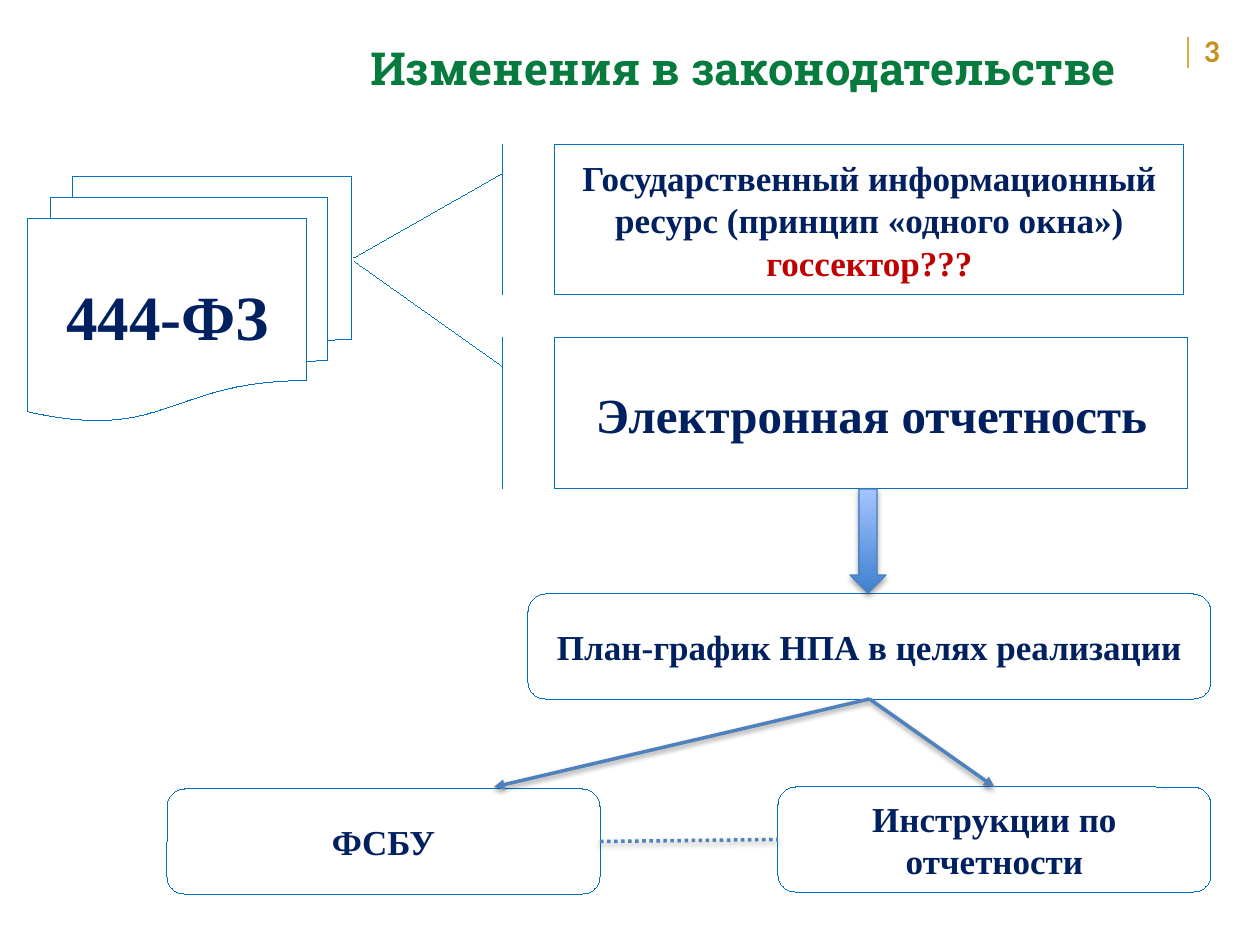
"""Build the slide that maps law 444-ФЗ to its reporting consequences."""
from dataclasses import dataclass
from typing import Optional

from lxml.etree import SubElement
from pptx import Presentation
from pptx.dml.color import RGBColor
from pptx.enum.dml import MSO_LINE
from pptx.enum.shapes import MSO_CONNECTOR, MSO_SHAPE
from pptx.enum.text import MSO_ANCHOR, PP_ALIGN
from pptx.oxml.ns import qn
from pptx.util import Emu, Pt

EMU_PER_PX = 914400 / 126
TOP, LEFT, BOTTOM, RIGHT = range(4)


@dataclass(frozen=True)
class Theme:
    green: str = "077A3E"
    gold: str = "C79023"
    pale_gold: str = "DEAA46"
    navy: str = "002060"
    red: str = "C00000"
    outline: str = "0070C0"
    arrow: str = "4F81BD"
    arrow_edge: str = "4B7EBC"
    arrow_dark: str = "3F80CE"
    arrow_light: str = "A4C4FF"
    title_font: str = "Roboto Slab"
    number_font: str = "Calibri"
    body_font: str = "Times New Roman"
    title_size: int = 26
    number_size: int = 18
    law_size: int = 36
    large_size: int = 28
    body_size: int = 20
    thin: float = 0.75
    thick: float = 2


@dataclass(frozen=True)
class Area:
    left: int
    top: int
    width: int
    height: int

    def emu(self) -> tuple:
        """Return the four lengths in EMU."""
        return tuple(map(px, (self.left, self.top, self.width, self.height)))


@dataclass(frozen=True)
class Block:
    key: str
    preset: MSO_SHAPE
    area: Area
    text: str
    size: int
    warning: str = ""
    adjustments: tuple = ()


@dataclass(frozen=True)
class Link:
    start: tuple
    end: tuple
    begin_at: Optional[tuple] = None
    end_at: Optional[tuple] = None
    dotted: bool = False


THEME = Theme()
ROUNDED = MSO_SHAPE.ROUNDED_RECTANGLE
CALLOUT = MSO_SHAPE.LINE_CALLOUT_1_BORDER_AND_ACCENT_BAR

BLOCKS = (
    Block("law", MSO_SHAPE.FLOWCHART_MULTIDOCUMENT, Area(28, 177, 324, 244),
          "444-ФЗ", THEME.law_size),
    Block("reporting", CALLOUT, Area(555, 338, 633, 151), "Электронная отчетность",
          THEME.large_size, adjustments=(0.188, -0.083, -0.505, -0.316)),
    Block("resource", CALLOUT, Area(555, 145, 629, 150),
          "Государственный информационный ресурс (принцип «одного окна»)",
          THEME.body_size, "госсектор???", (0.188, -0.083, 0.753, -0.32)),
    Block("plan", ROUNDED, Area(528, 594, 683, 105),
          "План-график НПА в целях реализации", THEME.body_size),
    Block("standards", ROUNDED, Area(167, 789, 433, 105), "ФСБУ", THEME.body_size),
    Block("instructions", ROUNDED, Area(778, 787, 433, 105),
          "Инструкции по отчетности", THEME.body_size),
)

LINKS = (
    Link((870, 699), (494, 787), begin_at=("plan", BOTTOM)),
    Link((870, 699), (995, 787), ("plan", BOTTOM), ("instructions", TOP)),
    Link((600, 842), (778, 839), ("standards", RIGHT), ("instructions", LEFT), True),
)


def px(length: int) -> Emu:
    """Turn pixels into EMU."""
    return Emu(round(length * EMU_PER_PX))


def rgb(value: str) -> RGBColor:
    """Turn a hexadecimal string into a colour."""
    return RGBColor.from_string(value)


def write_text(frame, text: str, *, size: int, font: str = THEME.body_font,
               color: str = THEME.navy, align=PP_ALIGN.CENTER) -> None:
    """Write one bold paragraph into a text frame."""
    frame.word_wrap = True
    para = frame.add_paragraph() if frame.text else frame.paragraphs[0]
    para.alignment = align
    span = para.add_run()
    span.text = text
    span.font.size = Pt(size)
    span.font.name = font
    span.font.bold = True
    span.font.color.rgb = rgb(color)


def add_text_box(page, area: Area, text: str, inset: int, **text_format) -> None:
    """Add a text box with its own left inset."""
    frame = page.shapes.add_textbox(*area.emu()).text_frame
    frame.margin_left = px(inset)
    write_text(frame, text, **text_format)


def style_line(line, color: str, width: float) -> None:
    """Give a line its colour and width."""
    line.color.rgb = rgb(color)
    line.width = Pt(width)


def add_shadow(effects, opacity: int, distance: int) -> None:
    """Add a soft shadow that falls downwards."""
    shadow = SubElement(effects, qn("a:outerShdw"), blurRad="40000", dist=str(distance),
                        dir="5400000", rotWithShape="0")
    black = SubElement(shadow, qn("a:srgbClr"), val="000000")
    SubElement(black, qn("a:alpha"), val=str(opacity * 1000))


def add_block(page, block: Block):
    """Draw a shape with a default hairline outline and centred text."""
    shape = page.shapes.add_shape(block.preset, *block.area.emu())
    shape.shadow.inherit = False
    shape.element.remove(shape.element.find(qn("p:style")))
    for index, value in enumerate(block.adjustments):
        shape.adjustments[index] = value
    shape.fill.background()
    shape.line.color.rgb = rgb(THEME.outline)
    shape.text_frame.vertical_anchor = MSO_ANCHOR.MIDDLE
    write_text(shape.text_frame, block.text, size=block.size)
    if block.warning:
        write_text(shape.text_frame, block.warning, size=block.size, color=THEME.red)
    return shape


def add_down_arrow(page, area: Area) -> None:
    """Draw the shaded arrow that leads to the plan."""
    arrow = page.shapes.add_shape(MSO_SHAPE.DOWN_ARROW, *area.emu())
    arrow.shadow.inherit = False
    arrow.fill.gradient()
    arrow.fill.gradient_angle = 90
    for stop, color in zip(arrow.fill.gradient_stops, (THEME.arrow_dark, THEME.arrow_light)):
        stop.color.rgb = rgb(color)
    style_line(arrow.line, THEME.arrow_edge, THEME.thin)
    add_shadow(arrow.element.spPr.find(qn("a:effectLst")), 35, 23000)


def add_line(page, start: tuple, end: tuple, color: str, width: float) -> tuple:
    """Draw a straight line and return it with its effect list."""
    line = page.shapes.add_connector(MSO_CONNECTOR.STRAIGHT, *map(px, start + end))
    style_line(line.line, color, width)
    return line, SubElement(line.element.spPr, qn("a:effectLst"))


def add_link(page, link: Link, shapes: dict) -> None:
    """Draw an arrow or a dotted line between blocks."""
    line, effects = add_line(page, link.start, link.end, THEME.arrow, THEME.thick)
    add_shadow(effects, 38, 20000)
    if link.dotted:
        line.line.dash_style = MSO_LINE.ROUND_DOT
    else:
        SubElement(line.element.spPr.find(qn("a:ln")), qn("a:tailEnd"), type="triangle")
    for join, target in ((line.begin_connect, link.begin_at), (line.end_connect, link.end_at)):
        if target:
            key, side = target
            join(shapes[key], side)


def main() -> None:
    """Build and save the deck."""
    deck = Presentation()
    deck.slide_width, deck.slide_height = px(1260), px(945)
    page = deck.slides.add_slide(deck.slide_layouts[6])
    add_text_box(page, Area(267, 34, 890, 68), "Изменения в законодательстве", 76,
                 size=THEME.title_size, font=THEME.title_font, color=THEME.green)
    add_text_box(page, Area(1184, 25, 53, 50), "3", 20, size=THEME.number_size,
                 font=THEME.number_font, color=THEME.gold, align=PP_ALIGN.LEFT)
    add_line(page, (1188, 37), (1188, 68), THEME.pale_gold, 1)
    shapes = {block.key: add_block(page, block) for block in BLOCKS}
    add_down_arrow(page, Area(850, 489, 36, 104))
    for link in LINKS:
        add_link(page, link, shapes)
    deck.save("out.pptx")


if __name__ == "__main__":
    main()
